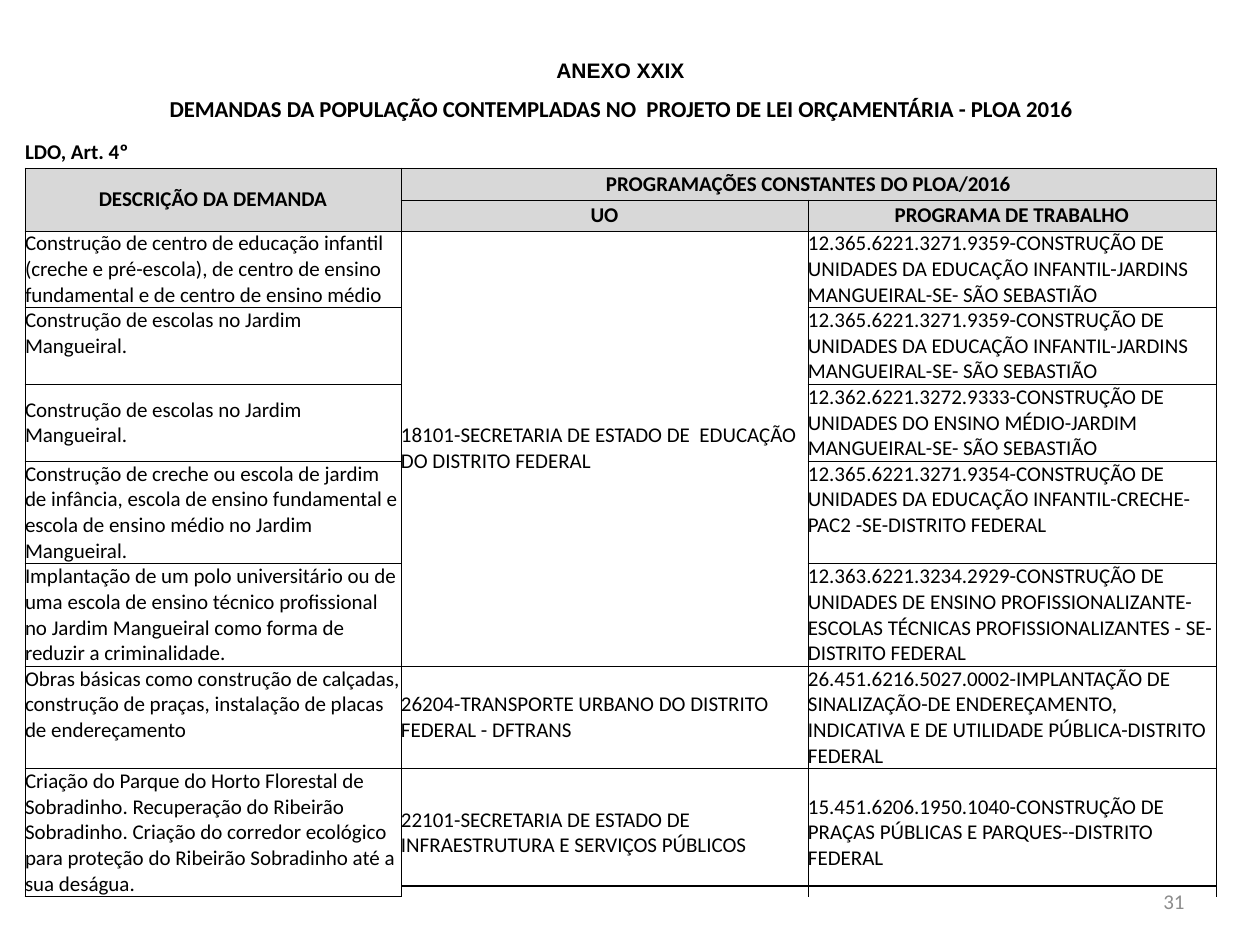
from dataclasses import dataclass

from lxml import etree
from pptx import Presentation
from pptx.dml.color import RGBColor
from pptx.enum.shapes import MSO_CONNECTOR
from pptx.enum.text import MSO_ANCHOR, PP_ALIGN
from pptx.oxml.ns import qn
from pptx.util import Emu, Pt

PX = 914400 // 126
BLACK = RGBColor(0x00, 0x00, 0x00)
HEADER_GRAY = RGBColor(0xD8, 0xD8, 0xD8)
NUMBER_GRAY = RGBColor(0x8C, 0x8C, 0x8C)
LEFT, CENTER, RIGHT = PP_ALIGN.LEFT, PP_ALIGN.CENTER, PP_ALIGN.RIGHT
TOP, MIDDLE, BOTTOM = MSO_ANCHOR.TOP, MSO_ANCHOR.MIDDLE, MSO_ANCHOR.BOTTOM
STRAIGHT = MSO_CONNECTOR.STRAIGHT

COLUMN_WIDTHS = [376, 407, 408]
ROW_HEIGHTS = [47, 53, 32, 32, 31, 73, 73, 73, 97, 97, 97, 121]
TITLE_ROWS = 2
LABEL_ROW = 2
HEADER_ROWS = (3, 4)
LAST_ROW = len(ROW_HEIGHTS) - 1
SIDES = "LRTB"


@dataclass(frozen=True)
class Entry:
    row: int
    column: int
    text: str
    anchor: MSO_ANCHOR = TOP
    align: PP_ALIGN = LEFT
    bold: bool = False
    size: int = 12
    font: str = "Calibri"
    rows: int = 1
    columns: int = 1


def header(row: int, column: int, text: str, rows: int = 1, columns: int = 1) -> Entry:
    return Entry(row, column, text, MIDDLE, CENTER, True, rows=rows, columns=columns)


ENTRIES = [
    Entry(0, 0, "ANEXO XXIX", BOTTOM, CENTER, True, font="Arial", columns=3),
    Entry(1, 0, "DEMANDAS DA POPULAÇÃO CONTEMPLADAS NO  PROJETO DE LEI ORÇAMENTÁRIA - PLOA 2016",
          MIDDLE, CENTER, True, size=13, columns=3),
    Entry(2, 0, "LDO, Art. 4º", MIDDLE, bold=True),
    header(3, 0, "DESCRIÇÃO DA DEMANDA", rows=2),
    header(3, 1, "PROGRAMAÇÕES CONSTANTES DO PLOA/2016", columns=2),
    header(4, 1, "UO"),
    header(4, 2, "PROGRAMA DE TRABALHO"),
    Entry(5, 0, "Construção de centro de educação infantil (creche e pré-escola), de centro de "
                "ensino fundamental e de centro de ensino médio"),
    Entry(5, 1, "18101-SECRETARIA DE ESTADO DE  EDUCAÇÃO DO DISTRITO FEDERAL", MIDDLE, rows=5),
    Entry(5, 2, "12.365.6221.3271.9359-CONSTRUÇÃO DE UNIDADES DA EDUCAÇÃO INFANTIL-JARDINS "
                "MANGUEIRAL-SE- SÃO SEBASTIÃO"),
    Entry(6, 0, "Construção de escolas no Jardim Mangueiral."),
    Entry(6, 2, "12.365.6221.3271.9359-CONSTRUÇÃO DE UNIDADES DA EDUCAÇÃO INFANTIL-JARDINS "
                "MANGUEIRAL-SE- SÃO SEBASTIÃO"),
    Entry(7, 0, "Construção de escolas no Jardim Mangueiral.", MIDDLE),
    Entry(7, 2, "12.362.6221.3272.9333-CONSTRUÇÃO DE UNIDADES DO ENSINO MÉDIO-JARDIM "
                "MANGUEIRAL-SE- SÃO SEBASTIÃO"),
    Entry(8, 0, "Construção de creche ou escola de jardim de infância, escola de ensino "
                "fundamental e escola de ensino médio no Jardim Mangueiral."),
    Entry(8, 2, "12.365.6221.3271.9354-CONSTRUÇÃO DE UNIDADES DA EDUCAÇÃO INFANTIL-CRECHE- "
                "PAC2 -SE-DISTRITO FEDERAL"),
    Entry(9, 0, "Implantação de um polo universitário ou de uma escola de ensino técnico "
                "profissional no Jardim Mangueiral como forma de reduzir a criminalidade."),
    Entry(9, 2, "12.363.6221.3234.2929-CONSTRUÇÃO DE UNIDADES DE ENSINO PROFISSIONALIZANTE-"
                "ESCOLAS TÉCNICAS PROFISSIONALIZANTES - SE-DISTRITO FEDERAL"),
    Entry(10, 0, "Obras básicas como construção de calçadas, construção de praças, instalação "
                 "de placas de endereçamento"),
    Entry(10, 1, "26204-TRANSPORTE URBANO DO DISTRITO FEDERAL - DFTRANS", MIDDLE),
    Entry(10, 2, "26.451.6216.5027.0002-IMPLANTAÇÃO DE SINALIZAÇÃO-DE ENDEREÇAMENTO, INDICATIVA "
                 "E DE UTILIDADE PÚBLICA-DISTRITO FEDERAL", MIDDLE),
    Entry(11, 0, "Criação do Parque do Horto Florestal de Sobradinho. Recuperação do Ribeirão "
                 "Sobradinho. Criação do corredor ecológico para proteção do Ribeirão Sobradinho "
                 "até a sua deságua."),
    Entry(11, 1, "22101-SECRETARIA DE ESTADO DE INFRAESTRUTURA E SERVIÇOS PÚBLICOS", MIDDLE),
    Entry(11, 2, "15.451.6206.1950.1040-CONSTRUÇÃO DE PRAÇAS PÚBLICAS E PARQUES--DISTRITO FEDERAL",
          MIDDLE),
]


def px(length: int) -> Emu:
    return Emu(length * PX)


def add_run(paragraph, text: str, font: str, size: int, color: RGBColor, bold: bool = False) -> None:
    run = paragraph.add_run()
    run.text = text
    run.font.name = font
    run.font.size = Pt(size)
    run.font.bold = bold
    run.font.color.rgb = color


def bordered_sides(row: int, column: int) -> str:
    if row < TITLE_ROWS:
        return ""
    if row == LABEL_ROW:
        return "B"
    if row == LAST_ROW and column > 0:
        return "LRT"
    return SIDES


def set_borders(cell, sides: str) -> None:
    properties = cell._tc.get_or_add_tcPr()
    for side in SIDES:
        line = etree.SubElement(properties, qn(f"a:ln{side}"), w=str(Pt(0.5)))
        if side in sides:
            fill = etree.SubElement(line, qn("a:solidFill"))
            etree.SubElement(fill, qn("a:srgbClr"), val=str(BLACK))
        else:
            etree.SubElement(line, qn("a:noFill"))


def format_cell(cell, row: int, column: int) -> None:
    cell.margin_left = cell.margin_right = cell.margin_top = cell.margin_bottom = 0
    set_borders(cell, bordered_sides(row, column))
    if row in HEADER_ROWS:
        cell.fill.solid()
        cell.fill.fore_color.rgb = HEADER_GRAY
    else:
        cell.fill.background()


def fill_entry(table, entry: Entry) -> None:
    cell = table.cell(entry.row, entry.column)
    if entry.rows > 1 or entry.columns > 1:
        cell.merge(table.cell(entry.row + entry.rows - 1, entry.column + entry.columns - 1))
    cell.vertical_anchor = entry.anchor
    paragraph = cell.text_frame.paragraphs[0]
    paragraph.alignment = entry.align
    add_run(paragraph, entry.text, entry.font, entry.size, BLACK, entry.bold)


def add_demand_table(slide) -> None:
    frame = slide.shapes.add_table(len(ROW_HEIGHTS), len(COLUMN_WIDTHS), px(25), px(36),
                                   px(sum(COLUMN_WIDTHS)), px(sum(ROW_HEIGHTS)))
    table = frame.table
    table.first_row = False
    table.horz_banding = False
    for column, width in zip(table.columns, COLUMN_WIDTHS):
        column.width = px(width)
    for row, height in zip(table.rows, ROW_HEIGHTS):
        row.height = px(height)
    for row in range(len(ROW_HEIGHTS)):
        for column in range(len(COLUMN_WIDTHS)):
            format_cell(table.cell(row, column), row, column)
    for entry in ENTRIES:
        fill_entry(table, entry)
    for cell in table.iter_cells():
        if not cell.text_frame.text:
            paragraph = cell.text_frame.paragraphs[0]
            etree.SubElement(paragraph._p, qn("a:endParaRPr"), sz="1200")


def add_page_number(slide) -> None:
    box = slide.shapes.add_textbox(px(903), px(876), px(294), px(50))
    box.text_frame.word_wrap = True
    box.text_frame.vertical_anchor = MIDDLE
    paragraph = box.text_frame.paragraphs[0]
    paragraph.alignment = RIGHT
    add_run(paragraph, "31", "Calibri", 12, NUMBER_GRAY)


def add_closing_line(slide) -> None:
    line = slide.shapes.add_connector(STRAIGHT, px(402), px(886), px(1216), px(886))
    line.line.color.rgb = BLACK
    line.line.width = Pt(0.75)
    etree.SubElement(line._element.spPr, qn("a:effectLst"))


def main() -> None:
    presentation = Presentation()
    presentation.slide_width = px(1260)
    presentation.slide_height = px(945)
    slide = presentation.slides.add_slide(presentation.slide_layouts[6])
    add_demand_table(slide)
    add_page_number(slide)
    add_closing_line(slide)
    presentation.save("out.pptx")


if __name__ == "__main__":
    main()
